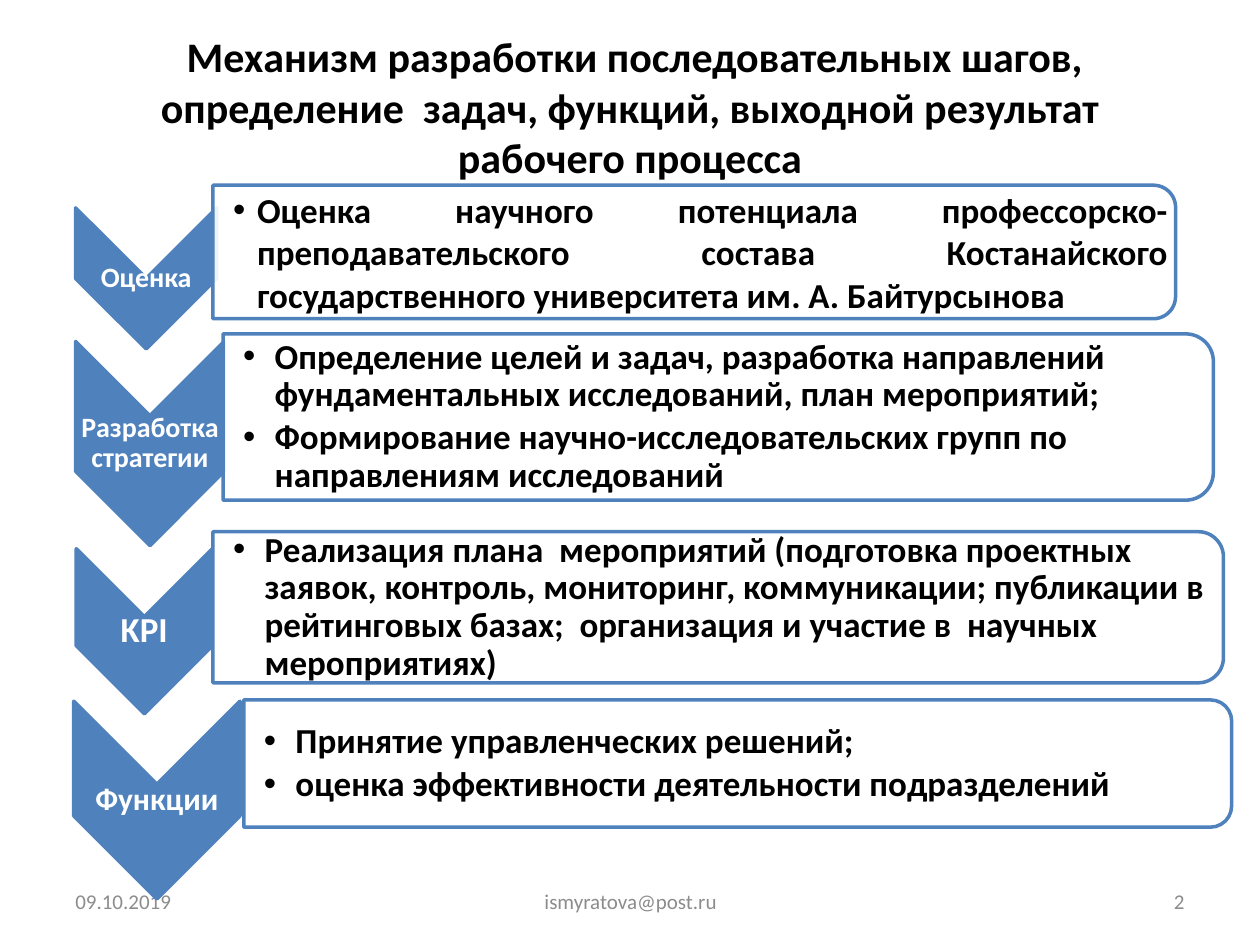
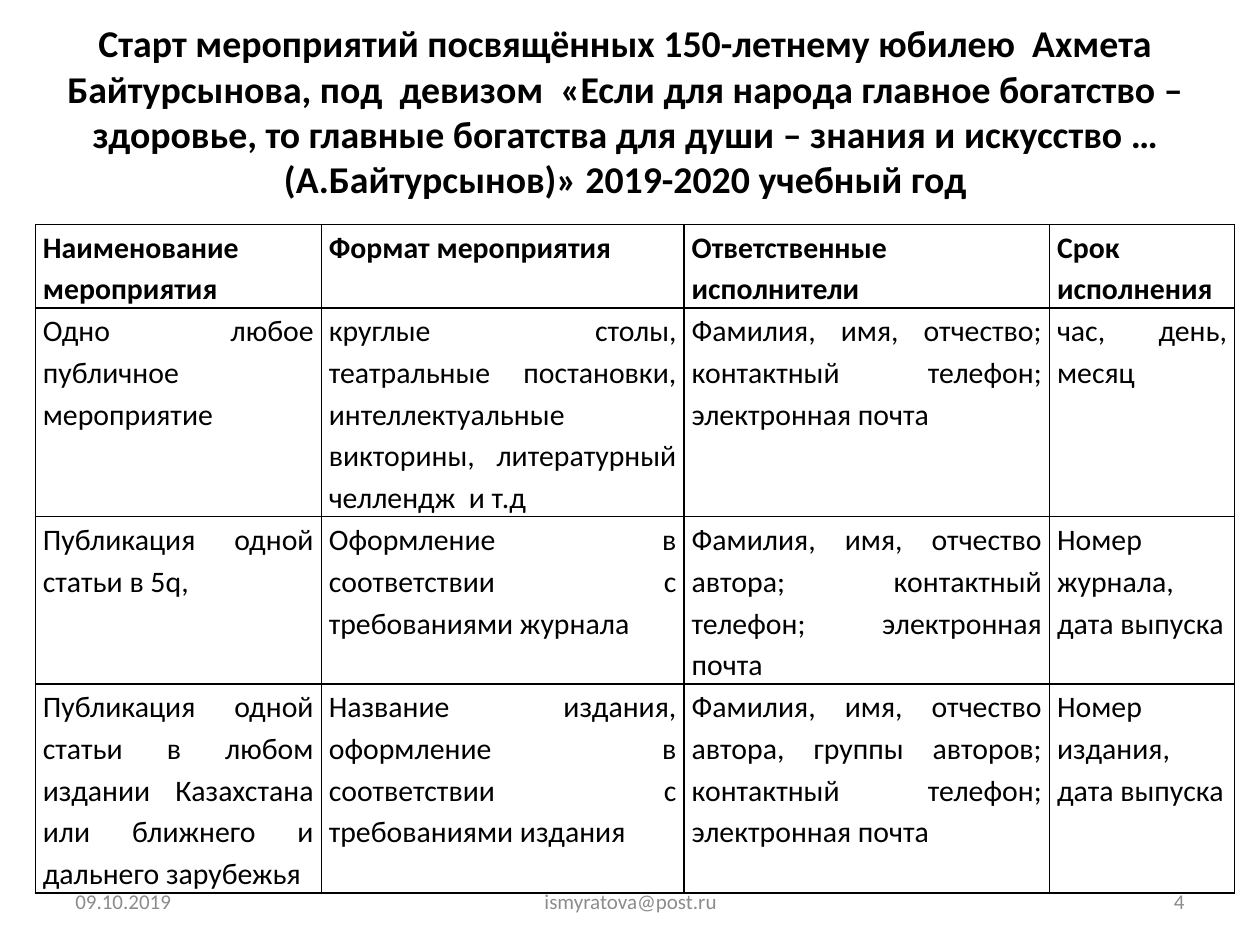
import dataclasses

import lxml.etree
import pptx
import pptx.dml.color
import pptx.enum.shapes
import pptx.enum.text
import pptx.oxml.ns
import pptx.util

ALIGN = pptx.enum.text.PP_ALIGN
SHAPE = pptx.enum.shapes.MSO_SHAPE
BLACK = pptx.dml.color.RGBColor(0x00, 0x00, 0x00)
WHITE = pptx.dml.color.RGBColor(0xFF, 0xFF, 0xFF)
BLUE = pptx.dml.color.RGBColor(0x4F, 0x81, 0xBD)
GREY = pptx.dml.color.RGBColor(0x8C, 0x8C, 0x8C)
FONT = "Calibri"
BLANK_LAYOUT = 6
DATE = "09.10.2019"
EMAIL = "ismyratova@post.ru"
TEXT_MARGINS = (0.1, 0.05, 0.1, 0.05)
TIGHT_MARGINS = (0.01, 0.01, 0.01, 0.01)
PANEL_MARGINS = (0.16, 0.01, 0.01, 0.01)
CELL_MARGINS = (0.06, 0, 0.06, 0)
CORNER_INSET = 0.05


@dataclasses.dataclass
class Box:
    left: int
    top: int
    width: int
    height: int

    def inner(self, left, top, width, height):
        """Return an inner box given in percent of this one."""
        return Box(self.left + round(self.width * left / 100),
                   self.top + round(self.height * top / 100),
                   round(self.width * width / 100),
                   round(self.height * height / 100))

    def turned(self):
        """Return the frame that fills this box after a quarter turn."""
        shift = (self.width - self.height) // 2
        return Box(self.left + shift, self.top - shift, self.height, self.width)

    def frame(self):
        return self.left, self.top, self.width, self.height


@dataclasses.dataclass
class Step:
    label: str
    label_size: int
    chevron: tuple
    panel: tuple
    points: tuple
    align: int = ALIGN.LEFT
    indent: float = 0.25
    spacing: float = 0.9
    gap: int = 3


PAGE = Box(0, 0, pptx.util.Inches(10), pptx.util.Inches(7.5))

STEPS = (
    Step("Оценка", 16, (6, 22, 11.2, 14.93), (16.9, 19.6, 76.4, 14.13),
         ("Оценка научного потенциала профессорско-преподавательского состава "
          "Костанайского государственного университета им. А. Байтурсынова",),
         ALIGN.JUSTIFY, 0.19, 1.0, 0),
    Step("Разработка стратегии", 16, (6, 36.13, 11.8, 21.6),
         (17.7, 35.33, 78.6, 17.6),
         ("Определение целей и задач, разработка направлений фундаментальных "
          "исследований, план мероприятий;",
          "Формирование научно-исследовательских групп по направлениям "
          "исследований")),
    Step("KPI", 20, (6.05, 58.07, 10.8, 17.47), (16.9, 56.27, 80.2, 16),
         ("Реализация плана  мероприятий (подготовка проектных заявок, контроль, "
          "мониторинг, коммуникации; публикации в рейтинговых базах;  "
          "организация и участие в  научных мероприятиях)",)),
    Step("Функции", 18, (5.85, 74.2, 13.2, 20.93), (19.35, 74.07, 78.4, 13.47),
         ("Принятие управленческих решений;",
          "оценка эффективности деятельности подразделений")),
)

COLUMN_SHARES = (22.7, 28.8, 29, 14.7)
ROW_SHARES = (8.53, 21.73, 17.33, 21.73)
EVENTS = (
    ("Наименование мероприятия", "Формат мероприятия ",
     "Ответственные  исполнители", "Срок исполнения"),
    ("Одно любое публичное мероприятие",
     "круглые столы, театральные постановки, интеллектуальные викторины, "
     "литературный челлендж  и т.д",
     "Фамилия, имя, отчество; контактный телефон; электронная почта",
     "час, день, месяц"),
    ("Публикация одной статьи в 5q,",
     "Оформление в соответствии с требованиями журнала",
     "Фамилия, имя, отчество автора; контактный телефон; электронная почта",
     "Номер журнала, дата выпуска"),
    ("Публикация одной статьи в любом издании Казахстана или ближнего и "
     "дальнего зарубежья",
     "Название издания, оформление в соответствии с требованиями издания",
     "Фамилия, имя, отчество автора, группы авторов; контактный телефон; "
     "электронная почта",
     "Номер издания, дата выпуска"),
)


def add_xml(parent, tag, **attributes):
    return lxml.etree.SubElement(parent, pptx.oxml.ns.qn(tag), attributes)


def set_margins(holder, margins):
    (holder.margin_left, holder.margin_top,
     holder.margin_right, holder.margin_bottom) = map(pptx.util.Inches, margins)


def write(paragraph, text, size, color=BLACK, bold=False, align=ALIGN.LEFT,
          spacing=1.0):
    paragraph.alignment = align
    paragraph.line_spacing = spacing
    run = paragraph.add_run()
    run.text = text
    run.font.name = FONT
    run.font.size = pptx.util.Pt(size)
    run.font.bold = bold
    run.font.color.rgb = color


def add_frame(slide, box, margins=TEXT_MARGINS):
    frame = slide.shapes.add_textbox(*box.frame()).text_frame
    frame.word_wrap = True
    frame.auto_size = pptx.enum.text.MSO_AUTO_SIZE.NONE
    frame.vertical_anchor = pptx.enum.text.MSO_ANCHOR.MIDDLE
    set_margins(frame, margins)
    return frame


def add_title(slide, box, text, size):
    write(add_frame(slide, box).paragraphs[0], text, size, bold=True,
          align=ALIGN.CENTER)


def add_footer(slide, box, number):
    for left, width, text, align in ((5, 23.3, DATE, ALIGN.LEFT),
                                     (34.2, 31.7, EMAIL, ALIGN.CENTER),
                                     (71.7, 23.3, str(number), ALIGN.RIGHT)):
        write(add_frame(slide, box.inner(left, 0, width, 100)).paragraphs[0],
              text, 12, GREY, align=align)


def add_turned_shape(slide, preset, box, fill):
    """Draw a preset shape turned clockwise so that it fills the box."""
    shape = slide.shapes.add_shape(preset, *box.turned().frame())
    shape.rotation = 90
    shape.shadow.inherit = False
    shape.fill.solid()
    shape.fill.fore_color.rgb = fill
    shape.line.color.rgb = BLUE
    shape.line.width = pptx.util.Pt(2)
    return shape


def add_chevron(slide, box, label, size):
    add_turned_shape(slide, SHAPE.CHEVRON, box, BLUE)
    label_box = Box(box.left, box.top + box.width // 2,
                    box.width, max(box.height - box.width, 0))
    write(add_frame(slide, label_box, TIGHT_MARGINS).paragraphs[0], label, size,
          WHITE, True, ALIGN.CENTER, 0.9)


def add_bullet(paragraph, indent):
    properties = paragraph._p.get_or_add_pPr()
    hang = pptx.util.Inches(indent)
    properties.set("marL", str(hang))
    properties.set("indent", str(-hang))
    add_xml(properties, "a:buFont", typeface="Arial")
    add_xml(properties, "a:buChar", char="•")


def add_panel(slide, box, step):
    panel = add_turned_shape(slide, SHAPE.ROUND_2_SAME_RECTANGLE, box, WHITE)
    fill = panel.element.spPr.find(pptx.oxml.ns.qn("a:solidFill"))
    add_xml(fill[0], "a:alpha", val="90000")
    inset = round(box.height * CORNER_INSET)
    text_box = Box(box.left, box.top + inset,
                   box.width - inset, box.height - 2 * inset)
    frame = add_frame(slide, text_box, PANEL_MARGINS)
    for index, point in enumerate(step.points):
        paragraph = frame.add_paragraph() if index else frame.paragraphs[0]
        paragraph.level = 1
        paragraph.space_after = pptx.util.Pt(step.gap)
        write(paragraph, point, 20, bold=True, align=step.align,
              spacing=step.spacing)
        add_bullet(paragraph, step.indent)


def add_borders(cell):
    properties = cell._tc.get_or_add_tcPr()
    for side in ("a:lnL", "a:lnR", "a:lnT", "a:lnB"):
        line = add_xml(properties, side, w=str(pptx.util.Pt(1)))
        add_xml(add_xml(line, "a:solidFill"), "a:srgbClr", val=str(BLACK))


def add_events_table(slide, box):
    table = slide.shapes.add_table(len(EVENTS), len(COLUMN_SHARES),
                                   *box.frame()).table
    table.first_row = table.horz_banding = False
    for column, share in zip(table.columns, COLUMN_SHARES):
        column.width = round(PAGE.width * share / 100)
    for row, share in zip(table.rows, ROW_SHARES):
        row.height = round(PAGE.height * share / 100)
    for row_index, event in enumerate(EVENTS):
        for column_index, text in enumerate(event):
            cell = table.cell(row_index, column_index)
            set_margins(cell, CELL_MARGINS)
            add_borders(cell)
            cell.fill.background()
            write(cell.text_frame.paragraphs[0], text, 17, bold=row_index == 0,
                  align=ALIGN.JUSTIFY, spacing=1.15)


def build_steps_slide(slide, page, footer):
    add_title(slide, page.inner(5, 4, 90, 14.53),
              " Механизм разработки последовательных шагов, определение  задач, "
              "функций, выходной результат рабочего процесса", 24)
    add_footer(slide, footer, 2)
    for step in STEPS:
        add_chevron(slide, page.inner(*step.chevron), step.label, step.label_size)
        add_panel(slide, page.inner(*step.panel), step)


def build_events_slide(slide, page, footer):
    add_title(slide, page.inner(2, 2.8, 95.3, 17.87),
              "Старт мероприятий посвящённых 150-летнему юбилею  Ахмета "
              "Байтурсынова, под  девизом  «Если для народа главное богатство – "
              "здоровье, то главные богатства для души – знания и искусство … "
              "(А.Байтурсынов)» 2019-2020 учебный год", 21.6)
    add_events_table(slide, page.inner(2.8, 23.73, sum(COLUMN_SHARES),
                                       sum(ROW_SHARES)))
    add_footer(slide, footer, 4)


def main():
    deck = pptx.Presentation()
    deck.slide_width, deck.slide_height = PAGE.width, PAGE.height
    footer = PAGE.inner(0, 92.67, 100, 5.33)
    for build in (build_steps_slide, build_events_slide):
        build(deck.slides.add_slide(deck.slide_layouts[BLANK_LAYOUT]), PAGE, footer)
    deck.save("out.pptx")


if __name__ == "__main__":
    main()
